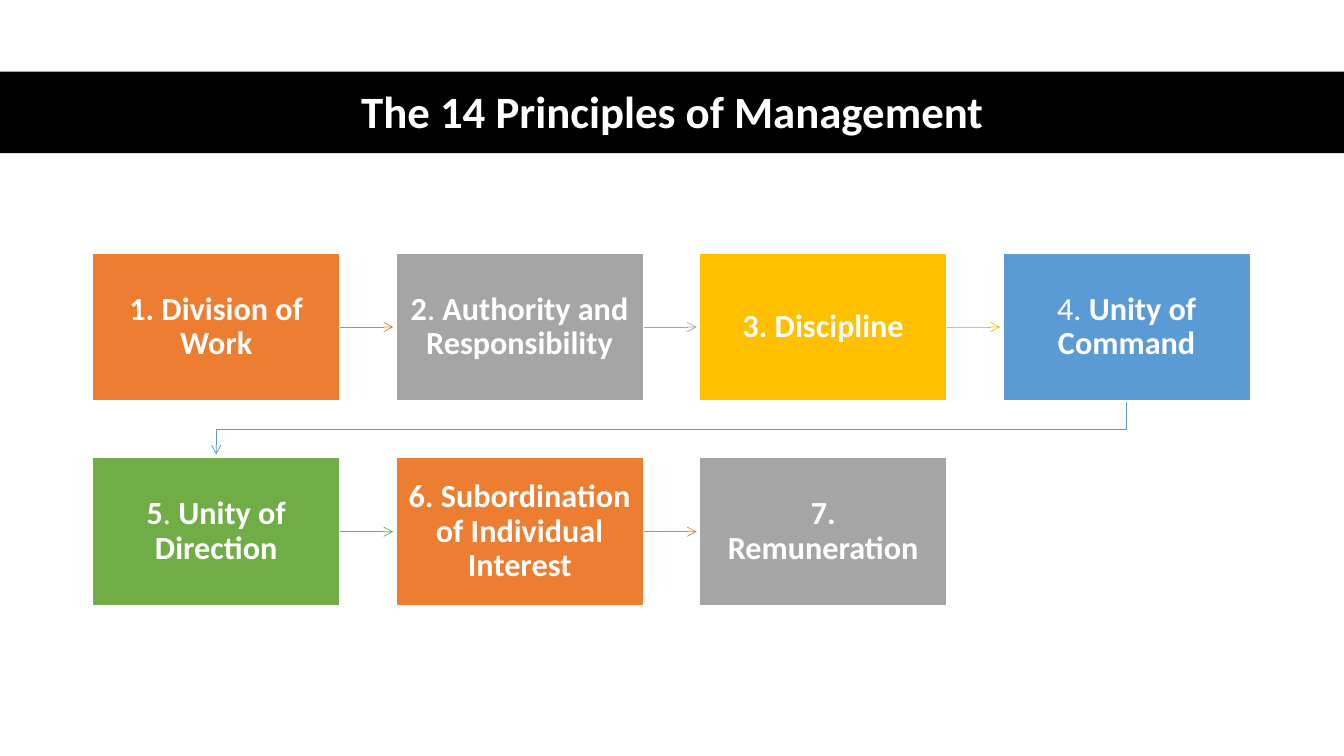
from dataclasses import dataclass
from itertools import pairwise

from lxml.etree import SubElement
from pptx import Presentation
from pptx.dml.color import RGBColor
from pptx.enum.shapes import MSO_CONNECTOR, MSO_SHAPE
from pptx.enum.text import MSO_ANCHOR, MSO_AUTO_SIZE, PP_ALIGN
from pptx.oxml.ns import qn
from pptx.util import Inches, Pt


@dataclass(frozen=True)
class Theme:
    font: str = "Calibri"
    title_size: float = 32
    step_size: float = 23
    border: float = 1
    arrow: float = 0.5
    white: str = "FFFFFF"
    black: str = "000000"
    accents: tuple = ("ED7D31", "A5A5A5", "FFC000", "5B9BD5", "70AD47")


@dataclass(frozen=True)
class Grid:
    columns: int = 4
    left: float = 0.92
    top: float = 2.51
    width: float = 2.45
    height: float = 1.47
    column_gap: float = 0.56
    row_gap: float = 0.56
    arrow_gap: float = 0.03

    def cell(self, index):
        row, column = divmod(index, self.columns)
        return (self.left + column * (self.width + self.column_gap),
                self.top + row * (self.height + self.row_gap))


class FlowSlide:
    def __init__(self, deck, theme, grid):
        self.theme, self.grid = theme, grid
        self.slide = deck.slides.add_slide(deck.slide_layouts[5])
        self.shapes = self.slide.shapes

    def block(self, left, top, width, height, color):
        block = self.shapes.add_shape(
            MSO_SHAPE.RECTANGLE, *map(Inches, (left, top, width, height)))
        block.shadow.inherit = False
        block.fill.solid()
        block.fill.fore_color.rgb = RGBColor.from_string(color)
        block.line.fill.background()
        return block

    def set_text(self, frame, runs, size):
        frame.word_wrap = True
        frame.auto_size = MSO_AUTO_SIZE.NONE
        frame.vertical_anchor = MSO_ANCHOR.MIDDLE
        paragraph = frame.paragraphs[0]
        paragraph.alignment = PP_ALIGN.CENTER
        paragraph.line_spacing = 0.9
        font = paragraph.font
        font.name, font.size, font.bold = self.theme.font, Pt(size), True
        font.color.rgb = RGBColor.from_string(self.theme.white)
        for text, bold in runs:
            run = paragraph.add_run()
            run.text = text
            if not bold:
                run.font.bold = False

    def title(self, text):
        bar = self.block(0, 0.71, 13.33, 0.81, self.theme.black)
        title = self.shapes.title
        title._element.addprevious(bar._element)
        title.left, title.top = Inches(0.92), Inches(0.74)
        title.width, title.height = Inches(11.5), Inches(0.78)
        self.set_text(title.text_frame, [(text, True)], self.theme.title_size)

    def color(self, index):
        return self.theme.accents[index % len(self.theme.accents)]

    def step(self, index, runs):
        step = self.block(*self.grid.cell(index), self.grid.width,
                          self.grid.height, self.color(index))
        step.line.color.rgb = RGBColor.from_string(self.theme.white)
        step.line.width = Pt(self.theme.border)
        frame = step.text_frame
        frame.margin_left = frame.margin_right = Inches(0.12)
        frame.margin_top = frame.margin_bottom = Inches(0.13)
        self.set_text(frame, runs, self.theme.step_size)

    def arrow(self, start, end):
        grid = self.grid
        (x1, y1), (x2, y2) = grid.cell(start), grid.cell(end)
        if y1 == y2:
            # Neighbours in one row
            middle = y1 + grid.height / 2
            arrow = self.shapes.add_connector(
                MSO_CONNECTOR.STRAIGHT,
                *map(Inches, (x1 + grid.width, middle,
                              x2 - grid.arrow_gap, middle)))
        else:
            # Return to the first column of the next row
            x1, x2 = x1 + grid.width / 2, x2 + grid.width / 2
            bottom = y1 + grid.height
            turn = (bottom + y2) / 2
            route = [(x1, bottom), (x1, turn), (x2, turn),
                     (x2, y2 - grid.arrow_gap)]
            points = [(Inches(x), Inches(y)) for x, y in route]
            outline = self.shapes.build_freeform(*points[0])
            outline.add_line_segments(points[1:], close=False)
            arrow = outline.convert_to_shape()
            arrow.fill.background()
        arrow.line.color.rgb = RGBColor.from_string(self.color(start))
        arrow.line.width = Pt(self.theme.arrow)
        properties = arrow._element.spPr
        SubElement(properties.find(qn("a:ln")), qn("a:tailEnd"), type="arrow")
        SubElement(properties, qn("a:effectLst"))


# Each principle is a list of (text, bold) pieces
PRINCIPLES = [
    [("1. Division of Work", True)],
    [("2", True), (". ", False), ("Authority and Responsibility", True)],
    [("3. Discipline", True)],
    [("4. ", False), ("Unity of Command", True)],
    [("5", True), (". ", False), ("Unity of Direction", True)],
    [("6. Subordination of Individual Interest", True)],
    [("7. Remuneration", True)],
]


def main():
    deck = Presentation()
    deck.slide_width, deck.slide_height = Inches(13.33), Inches(7.5)
    flow = FlowSlide(deck, Theme(), Grid())

    # Heading
    flow.title("The 14 Principles of Management")

    # Arrows, then the steps they join
    for start, end in pairwise(range(len(PRINCIPLES))):
        flow.arrow(start, end)
    for index, runs in enumerate(PRINCIPLES):
        flow.step(index, runs)

    deck.save("out.pptx")


if __name__ == "__main__":
    main()
